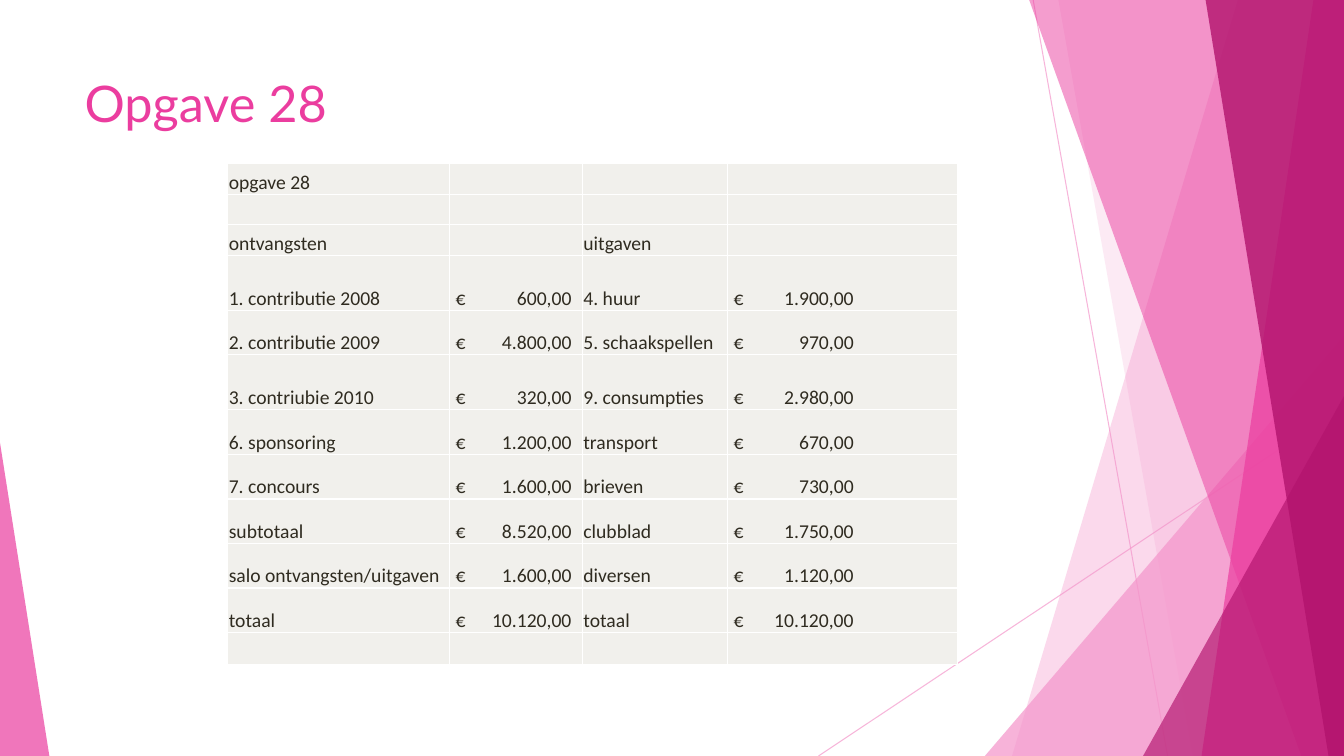
from lxml.etree import SubElement
from pptx import Presentation
from pptx.dml.color import RGBColor
from pptx.enum.shapes import MSO_CONNECTOR as CONN, MSO_SHAPE as SHAPE
from pptx.enum.text import MSO_ANCHOR as ANCHOR
from pptx.oxml.ns import qn
from pptx.util import Emu, Inches, Pt

COLS, ROWS = 160, 90
LIGHT, PINK, DARK = "F496CB", "EB3D9F", "B2136D"


def rgb(color):
    return RGBColor.from_string(color)


def fade(sp, percent):
    """Set the opacity of the shape's first colour."""
    clr = next(sp._element.spPr.iter(qn("a:srgbClr")))
    SubElement(clr, qn("a:alpha"), val=str(percent * 1000))


def write(p, text, font="Calibri", size=14, color="2F2B20", tab=None):
    """Fill a paragraph; tab is the place of a right-aligned tab stop."""
    if tab:
        tabs = SubElement(p._p.get_or_add_pPr(), qn("a:tabLst"))
        SubElement(tabs, qn("a:tab"), pos=str(tab), algn="r")
    if not text:
        SubElement(p._p, qn("a:endParaRPr"), sz=str(size * 100))
        return
    r = p.add_run()
    r.text = text
    r.font.name, r.font.size = font, Pt(size)
    r.font.color.rgb = rgb(color)


class Deck:
    """One slide on a grid of COLS by ROWS cells."""
    cell_fill, border = "F1F0EC", "FFFFFF"

    def __init__(self):
        self.prs = Presentation()
        self.prs.slide_width, self.prs.slide_height = Inches(13.33), Inches(7.5)
        self.s = self.prs.slides.add_slide(self.prs.slide_layouts[5])
        self.shapes = self.s.shapes

    def x(self, col):
        return Emu(round(self.prs.slide_width * col / COLS))

    def y(self, row):
        return Emu(round(self.prs.slide_height * row / ROWS))

    def paint(self, sp, color, opacity):
        sp.shadow.inherit = False
        sp.fill.solid()
        sp.fill.fore_color.rgb = rgb(color)
        sp.line.fill.background()
        fade(sp, opacity)

    def line(self, x1, y1, x2, y2):
        sp = self.shapes.add_connector(CONN.STRAIGHT, self.x(x1), self.y(y1),
                                       self.x(x2), self.y(y2))
        sp.line.color.rgb, sp.line.width = rgb(LIGHT), Pt(0.75)
        SubElement(sp._element.spPr, qn("a:effectLst"))
        fade(sp, 70)

    def ribbon(self, top, bottom, color, opacity):
        """Full-height band from a slanted left edge to the slide's right edge."""
        fb = self.shapes.build_freeform(self.x(top), 0)
        fb.add_line_segments([(self.x(COLS), 0), (self.x(COLS), self.y(ROWS)),
                              (self.x(bottom), self.y(ROWS))], close=True)
        self.paint(fb.convert_to_shape(), color, opacity)

    def corner(self, left, top, width, apex, color, opacity):
        """Right triangle standing on the slide's bottom edge."""
        sp = self.shapes.add_shape(SHAPE.ISOSCELES_TRIANGLE, self.x(left), self.y(top),
                                   self.x(width), self.y(ROWS - top))
        sp.adjustments[0] = apex
        self.paint(sp, color, opacity)

    def title(self, text, left, top, width, height):
        sp = self.shapes.title
        self.shapes._spTree.append(sp._element)
        sp.left, sp.top = self.x(left), self.y(top)
        sp.width, sp.height = self.x(width), self.y(height)
        tf = sp.text_frame
        tf.word_wrap, tf.vertical_anchor = True, ANCHOR.TOP
        p = tf.paragraphs[0]
        p.alignment = 1
        write(p, text, font="Lato", size=36, color=PINK)

    def table(self, data, left, top, widths, heights, tabs):
        """Draw the table; tabs maps an amount column to its tab stop."""
        t = self.shapes.add_table(len(heights), len(widths), self.x(left), self.y(top),
                                  self.x(sum(widths)), self.y(sum(heights))).table
        t.first_row = t.horz_banding = False
        for column, width in zip(t.columns, widths):
            column.width = self.x(width)
        for row, height, texts in zip(t.rows, heights, data):
            row.height = self.y(height)
            for i, (cell, text) in enumerate(zip(row.cells, texts)):
                self.cell(cell, text, tabs.get(i))

    def cell(self, cell, text, tab):
        tcPr = cell._tc.get_or_add_tcPr()
        for side in ("a:lnL", "a:lnR", "a:lnT", "a:lnB"):
            ln = SubElement(tcPr, qn(side), w=str(Pt(1)))
            fill = SubElement(ln, qn("a:solidFill"))
            SubElement(fill, qn("a:srgbClr"), val=self.border)
        cell.fill.solid()
        cell.fill.fore_color.rgb = rgb(self.cell_fill)
        amount = bool(tab and text)
        cell.margin_left = Inches(0.06 if amount else 0.01)
        cell.margin_right = cell.margin_top = Inches(0.01)
        cell.margin_bottom = 0
        cell.vertical_anchor = ANCHOR.BOTTOM
        write(cell.text_frame.paragraphs[0], f"€\t{text}" if amount else text,
              tab=self.x(tab) if amount else None)


BUDGET = [
    ("opgave 28", "", "", ""),
    ("", "", "", ""),
    ("ontvangsten", "", "uitgaven", ""),
    ("1. contributie 2008", "600,00", "4. huur", "1.900,00"),
    ("2. contributie 2009", "4.800,00", "5. schaakspellen", "970,00"),
    ("3. contriubie 2010", "320,00", "9. consumpties", "2.980,00"),
    ("6. sponsoring", "1.200,00", "transport", "670,00"),
    ("7. concours", "1.600,00", "brieven", "730,00"),
    ("subtotaal", "8.520,00", "clubblad", "1.750,00"),
    ("salo ontvangsten/uitgaven", "1.600,00", "diversen", "1.120,00"),
    ("totaal", "10.120,00", "totaal", "10.120,00"),
    ("", "", "", ""),
]
HEAD, TALL, ROW, LAST = 3.63, 6.55, 5.31, 3.78


def main():
    deck = Deck()
    deck.line(123, 0, 139, 90)
    deck.line(160, 48.36, 97.44, 90)
    deck.ribbon(147.36, 120.48, LIGHT, 36)
    deck.ribbon(126, 142, LIGHT, 20)
    deck.corner(117.24, 40, 42.76, 1, LIGHT, 72)
    deck.ribbon(122.52, 154.92, PINK, 50)
    deck.ribbon(156.36, 143.04, PINK, 70)
    deck.ribbon(143.52, 158.16, DARK, 80)
    deck.corner(136.08, 47.16, 23.92, 1, DARK, 66)
    deck.corner(0, 52.68, 5.88, 0, PINK, 70)
    deck.title("Opgave 28", 8.88, 8, 112.8, 17.28)
    deck.table(BUDGET, 27.12, 19.5, widths=[26.42, 15.8, 17.3, 27.36],
               heights=[HEAD] * 3 + [TALL, ROW, TALL] + [ROW] * 5 + [LAST],
               tabs={1: 13.8, 3: 14.3})
    deck.prs.save("out.pptx")


if __name__ == "__main__":
    main()
